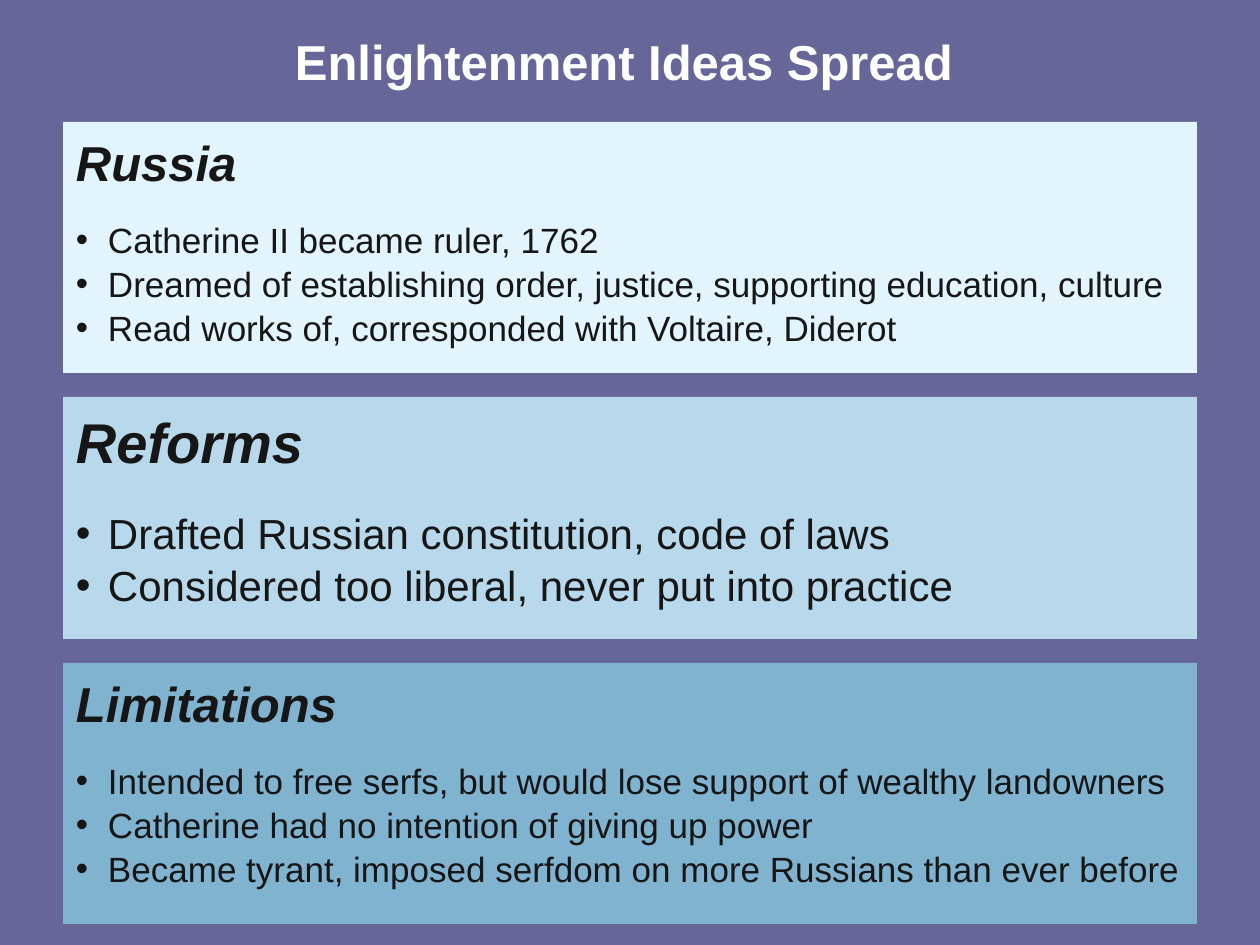
from lxml import etree
from pptx import Presentation
from pptx.dml.color import RGBColor
from pptx.enum.text import MSO_ANCHOR, MSO_AUTO_SIZE, PP_ALIGN
from pptx.oxml.ns import qn
from pptx.util import Pt

EMU_PER_PX = 914400 // 126
COMPARISON_LAYOUT = 4
COLORS = {
    "background": "666699",
    "title": "FFFFFF",
    "text": "161616",
    "russia": "E2F4FE",
    "reforms": "B8D9EC",
    "limitations": "80B3D0",
}
TITLE_BOX = (78, 24, 1092, 73)
PANEL_LEFT, PANEL_WIDTH = 63, 1134
INSET, TITLE_INSET, PANEL_TOP_INSET = 13, 6, 10
INDENT = 32

# placeholder index, colour, top, height, heading size, bullet size, heading, bullets
PANELS = [
    (1, "russia", 122, 251, 28, 20, "Russia", [
        "Catherine II became ruler, 1762",
        "Dreamed of establishing order, justice, supporting education, culture",
        "Read works of, corresponded with Voltaire, Diderot",
    ]),
    (2, "reforms", 397, 242, 32, 24, "Reforms", [
        "Drafted Russian constitution, code of laws",
        "Considered too liberal, never put into practice",
    ]),
    (3, "limitations", 663, 261, 28, 20, "Limitations", [
        "Intended to free serfs, but would lose support of wealthy landowners",
        "Catherine had no intention of giving up power",
        "Became tyrant, imposed serfdom on more Russians than ever before",
    ]),
]


def px(length):
    return length * EMU_PER_PX


def rgb(name):
    return RGBColor.from_string(COLORS[name])


def set_attributes(target, values):
    for name, value in values.items():
        setattr(target, name, value)


def place(shape, box, top_inset, anchor):
    """Move a placeholder into a box and prepare its text frame."""
    set_attributes(shape, dict(zip(("left", "top", "width", "height"), map(px, box))))
    set_attributes(shape.text_frame, {
        "word_wrap": True,
        "auto_size": MSO_AUTO_SIZE.NONE,
        "vertical_anchor": anchor,
        "margin_left": px(INSET),
        "margin_right": px(INSET),
        "margin_top": px(top_inset),
        "margin_bottom": px(TITLE_INSET),
    })


def write(paragraph, text, color, size, bold=False, italic=False):
    run = paragraph.add_run()
    run.text = text
    set_attributes(run.font, {
        "name": "Arial", "size": Pt(size), "bold": bold, "italic": italic,
    })
    run.font.color.rgb = rgb(color)


def set_bullet(paragraph, character=None):
    """Give the paragraph a hanging indent, with a bullet if one is named."""
    properties = paragraph._p.get_or_add_pPr()
    properties.set("marL", str(px(INDENT)))
    properties.set("indent", str(-px(INDENT)))
    if character:
        etree.SubElement(properties, qn("a:buFont")).set("typeface", "Arial")
        etree.SubElement(properties, qn("a:buChar")).set("char", character)
    else:
        etree.SubElement(properties, qn("a:buNone"))


def add_title(slide, box, text):
    title = slide.shapes.title
    place(title, box, TITLE_INSET, MSO_ANCHOR.MIDDLE)
    paragraph = title.text_frame.paragraphs[0]
    paragraph.alignment = PP_ALIGN.CENTER
    write(paragraph, text, "title", 28, bold=True)


def add_panel(panel, box, color, heading_size, bullet_size, heading, bullets):
    place(panel, box, PANEL_TOP_INSET, MSO_ANCHOR.TOP)
    panel.fill.solid()
    panel.fill.fore_color.rgb = rgb(color)

    paragraph = panel.text_frame.paragraphs[0]
    set_attributes(paragraph, {
        "space_before": Pt(0), "space_after": Pt(round(heading_size * 0.55)),
    })
    set_bullet(paragraph)
    write(paragraph, heading, "text", heading_size, bold=True, italic=True)

    for bullet in bullets:
        paragraph = panel.text_frame.add_paragraph()
        set_attributes(paragraph, {"space_before": Pt(1), "space_after": Pt(0)})
        set_bullet(paragraph, "•")
        write(paragraph, bullet, "text", bullet_size)


def main():
    presentation = Presentation()
    set_attributes(presentation, {"slide_width": px(1260), "slide_height": px(945)})
    slide = presentation.slides.add_slide(presentation.slide_layouts[COMPARISON_LAYOUT])
    slide.background.fill.solid()
    slide.background.fill.fore_color.rgb = rgb("background")

    add_title(slide, TITLE_BOX, "Enlightenment Ideas Spread")
    placeholders = {shape.placeholder_format.idx: shape for shape in slide.placeholders}
    for index, color, top, height, *content in PANELS:
        box = (PANEL_LEFT, top, PANEL_WIDTH, height)
        add_panel(placeholders[index], box, color, *content)

    for shape in list(slide.placeholders):
        if not shape.text_frame.text:
            shape.element.getparent().remove(shape.element)
    presentation.save("out.pptx")


if __name__ == "__main__":
    main()
